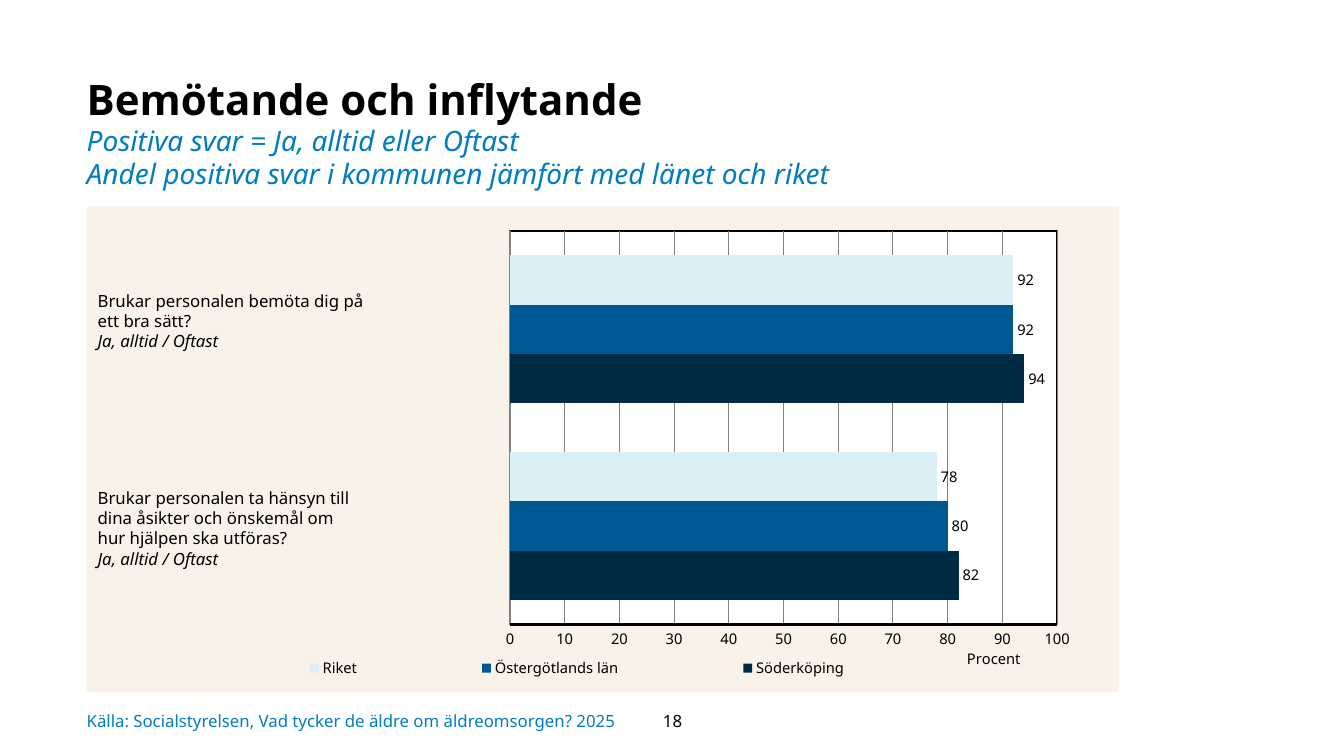
from lxml import etree
from pptx import Presentation
from pptx.chart.data import CategoryChartData
from pptx.dml.color import RGBColor
from pptx.enum.chart import XL_CHART_TYPE, XL_LABEL_POSITION, XL_LEGEND_POSITION, XL_TICK_MARK
from pptx.enum.text import MSO_ANCHOR, MSO_AUTO_SIZE, PP_ALIGN
from pptx.oxml.ns import qn
from pptx.util import Inches, Pt

BAR = XL_CHART_TYPE.BAR_CLUSTERED
OUT = XL_LABEL_POSITION.OUTSIDE_END
BOTTOM = XL_LEGEND_POSITION.BOTTOM
NO_TICK = XL_TICK_MARK.NONE
TOP, MIDDLE = MSO_ANCHOR.TOP, MSO_ANCHOR.MIDDLE
GROW, FIT = MSO_AUTO_SIZE.SHAPE_TO_FIT_TEXT, MSO_AUTO_SIZE.TEXT_TO_FIT_SHAPE
LEFT, CENTER = PP_ALIGN.LEFT, PP_ALIGN.CENTER

FONT = "Noto Sans"
COLORS = {"black": "000000", "blue": "017CC1", "sand": "F8F2E8", "white": "FFFFFF",
          "grid": "808080", "navy": "002B45", "mid": "005892", "pale": "DBF0F6"}
SERIES = [("Söderköping", (82, 94), "navy"),
          ("Östergötlands län", (80, 92), "mid"),
          ("Riket", (78, 92), "pale")]
ASKS = [("Brukar personalen bemöta dig på ett bra sätt?", (0.87, 2.83, 2.97, 0.88)),
        ("Brukar personalen ta hänsyn till dina åsikter och önskemål om hur hjälpen ska utföras?",
         (0.87, 4.79, 2.72, 1.09))]


def rgb(name):
    """Look up a colour by name."""
    return RGBColor.from_string(COLORS[name])


def style(font, size, color="black", bold=False, italic=False):
    """Set the face of a font."""
    font.name, font.size = FONT, Pt(size)
    font.bold, font.italic = bold, italic
    font.color.rgb = rgb(color)


def add_run(para, text, size, **look):
    """Append one styled run."""
    run = para.add_run()
    run.text = text
    style(run.font, size, **look)


def fill(form, name):
    """Give a format a solid fill."""
    form.fill.solid()
    form.fill.fore_color.rgb = rgb(name)


def rule(line, name, width):
    """Give a line its colour and width."""
    line.color.rgb = rgb(name)
    line.width = Pt(width)


def add_box(slide, box):
    """Add a wrapping text box and return its frame."""
    frame = slide.shapes.add_textbox(*map(Inches, box)).text_frame
    frame.word_wrap = True
    return frame


def add_head(slide, box):
    """Fill the title with a heading and two lines below it."""
    title = slide.shapes.title
    title.left, title.top, title.width, title.height = map(Inches, box)
    frame = title.text_frame
    frame.margin_left = frame.margin_top = 0
    frame.margin_right, frame.margin_bottom = Inches(0.1), Inches(0.05)
    frame.vertical_anchor, frame.auto_size = TOP, FIT
    para = frame.paragraphs[0]
    para.alignment, para.line_spacing = LEFT, 1.1
    add_run(para, "Bemötande och inflytande", 30, bold=True)
    for text in ("Positiva svar = Ja, alltid eller Oftast",
                 "Andel positiva svar i kommunen jämfört med länet och riket"):
        para.add_line_break()
        add_run(para, text, 20, color="blue", italic=True)


def add_ask(slide, box, text):
    """Place one survey question and its answers."""
    frame = add_box(slide, box)
    frame.auto_size = GROW
    add_run(frame.paragraphs[0], text, 12)
    add_run(frame.add_paragraph(), "Ja, alltid / Oftast", 12, italic=True)


def add_foot(slide, box, text, color, align, pad):
    """Place one text in the bottom row."""
    frame = add_box(slide, box)
    frame.vertical_anchor = MIDDLE
    frame.margin_left = frame.margin_right = Inches(pad)
    frame.margin_top = frame.margin_bottom = Inches(pad / 2)
    frame.paragraphs[0].alignment = align
    add_run(frame.paragraphs[0], text, 12, color=color)


def place(node, after, inner=False, **spots):
    """Lay out a chart part by fractions of the chart."""
    for old in node.findall(qn("c:layout")):
        node.remove(old)
    layout = etree.Element(qn("c:layout"))
    manual = etree.SubElement(layout, qn("c:manualLayout"))
    if inner:
        etree.SubElement(manual, qn("c:layoutTarget"), val="inner")
    for key in ("x", "y"):
        etree.SubElement(manual, qn(f"c:{key}Mode"), val="edge")
    for key, value in spots.items():
        etree.SubElement(manual, qn(f"c:{key}"), val=str(value))
    spot = 0 if after is None else node.index(node.find(qn(after))) + 1
    node.insert(spot, layout)


def add_axis(axis):
    """Format the percent axis with its grid and title."""
    axis.minimum_scale, axis.maximum_scale, axis.major_unit = 0, 100, 10
    axis.major_tick_mark = axis.minor_tick_mark = NO_TICK
    rule(axis.format.line, "black", 2)
    rule(axis.major_gridlines.format.line, "grid", 0.75)
    style(axis.tick_labels.font, 10.5)
    title = axis.axis_title
    add_run(title.text_frame.paragraphs[0], "Procent", 10.5)
    place(title._element, "c:tx", x=0.85, y=0.9)


def add_bars(slide, box):
    """Add the bar chart on its sand panel."""
    data = CategoryChartData()
    data.categories = ["1", "2"]
    for name, values, _ in SERIES:
        data.add_series(name, values)
    chart = slide.shapes.add_chart(BAR, *map(Inches, box), data).chart
    chart.has_title = False
    style(chart.font, 10.5)
    chart.category_axis.visible = False
    add_axis(chart.value_axis)

    plot = chart.plots[0]
    plot.gap_width, plot.overlap, plot.vary_by_categories = 100, 0, False
    for bars, (_, _, color) in zip(plot.series, SERIES):
        fill(bars.format, color)
        labels = bars.data_labels
        labels.show_value, labels.position = True, OUT
        style(labels.font, 10.5)

    chart.has_legend = True
    legend = chart.legend
    legend.position, legend.include_in_layout = BOTTOM, False
    style(legend.font, 10.5)
    place(legend._element, "c:legendPos", x=0.1, y=0.92, w=0.75, h=0.06)

    space = chart._chartSpace
    area = space.chart.plotArea
    place(area, None, inner=True, x=0.41, y=0.05, w=0.53, h=0.81)
    paint(area, "white", len(area), "black")
    paint(space, "sand", space.index(space.chart) + 1)


def paint(node, name, spot, edge=None):
    """Fill a chart area and draw its edge."""
    props = etree.Element(qn("c:spPr"))
    solid = etree.SubElement(props, qn("a:solidFill"))
    etree.SubElement(solid, qn("a:srgbClr"), val=COLORS[name])
    line = etree.SubElement(props, qn("a:ln"), w=str(Pt(1.5)))
    if edge:
        solid = etree.SubElement(line, qn("a:solidFill"))
        etree.SubElement(solid, qn("a:srgbClr"), val=COLORS[edge])
    else:
        etree.SubElement(line, qn("a:noFill"))
    node.insert(spot, props)


def main():
    """Build the slide and save it."""
    deck = Presentation()
    deck.slide_width, deck.slide_height = Inches(13.33), Inches(7.5)
    slide = deck.slides.add_slide(deck.slide_layouts[5])
    add_head(slide, (0.86, 0.73, 9.93, 1.23))
    add_bars(slide, (0.86, 2.05, 10.24, 4.82))
    for text, box in ASKS:
        add_ask(slide, box, text)
    add_foot(slide, (0.86, 6.95, 9, 0.4),
             "Källa: Socialstyrelsen, Vad tycker de äldre om äldreomsorgen? 2025", "blue", LEFT, 0)
    add_foot(slide, (6.16, 6.95, 1.02, 0.4), "18", "black", CENTER, 0.1)
    deck.save("out.pptx")


if __name__ == "__main__":
    main()
